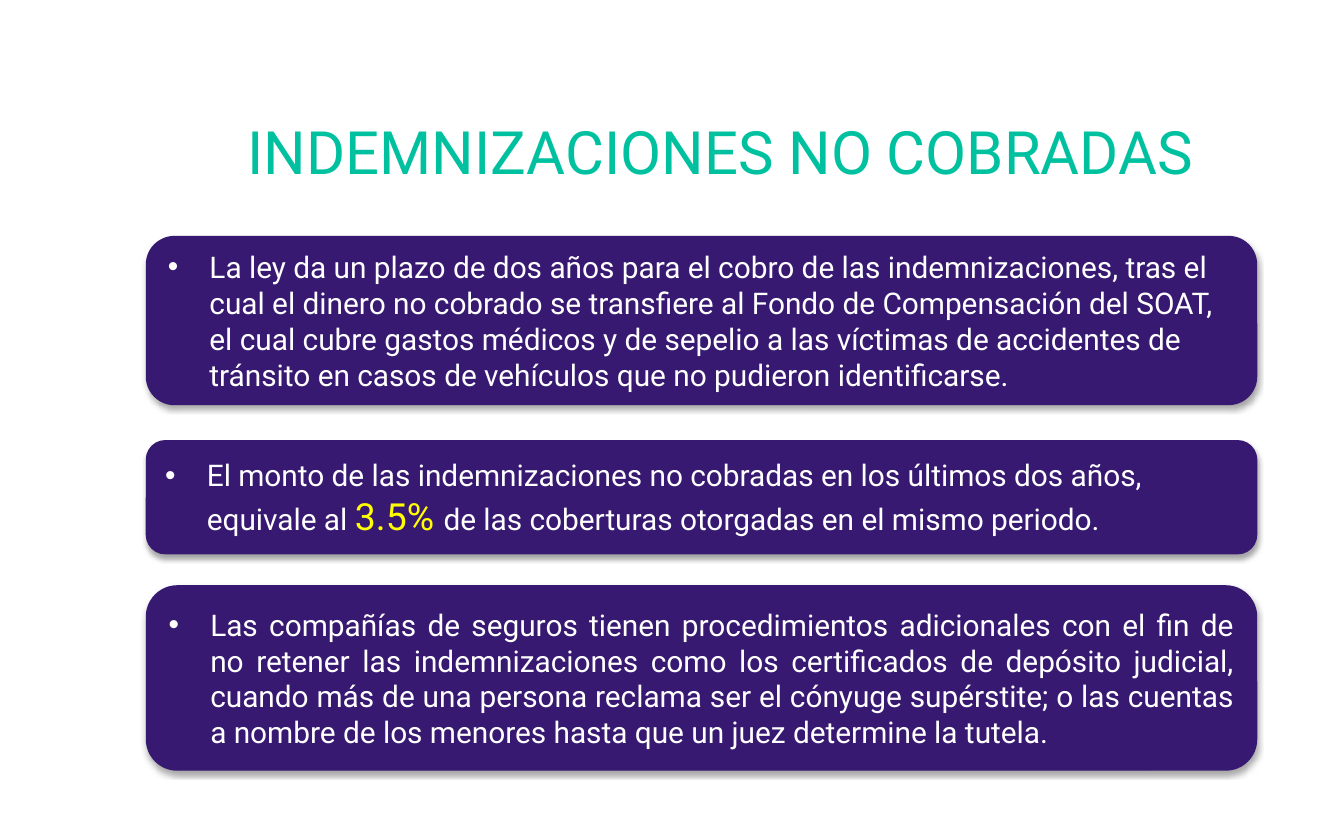
from lxml.etree import SubElement
from pptx import Presentation
from pptx.dml.color import RGBColor
from pptx.enum.shapes import MSO_SHAPE as Shape
from pptx.enum.text import MSO_ANCHOR as Anchor, PP_ALIGN as Align
from pptx.oxml.ns import qn
from pptx.util import Inches, Pt

TEAL, PURPLE, WHITE, YELLOW = "00C19F", "371971", "FFFFFF", "FFFF00"
SLIDE_WIDTH, SLIDE_HEIGHT = 10, 6.25
PANEL_LEFT, PANEL_WIDTH = 1.09, 8.26
INDENT = 0.31

PANELS = [
    (1.76, 1.25, Align.LEFT, [
        ("La ley da un plazo de dos años para el cobro de las indemnizaciones, tras el cual "
         "el dinero no cobrado se transfiere al Fondo de Compensación del SOAT, el cual cubre "
         "gastos médicos y de sepelio a las víctimas de accidentes de tránsito en casos de "
         "vehículos que no pudieron identificarse.", {})]),
    (3.28, 0.84, Align.LEFT, [
        ("El monto de las indemnizaciones no cobradas en los últimos dos años, equivale al ", {}),
        ("3.5% ", {"size": 20, "color": YELLOW}),
        ("de las coberturas otorgadas en el mismo periodo.", {})]),
    (4.36, 1.37, Align.JUSTIFY, [
        ("Las compañías de seguros tienen procedimientos adicionales con el fin de no retener "
         "las indemnizaciones como los certificados de depósito judicial, cuando más de una "
         "persona reclama ser el cónyuge supérstite; o las cuentas a nombre de los menores "
         "hasta que un juez determine la tutela.", {})]),
]


def rgb(hex_color):
    """Turn a hex string into a colour."""
    return RGBColor.from_string(hex_color)


def add_text(paragraph, text, size=16, color=WHITE, font="Roboto"):
    """Append one formatted run to a paragraph."""
    run = paragraph.add_run()
    run.text = text
    run.font.size = Pt(size)
    run.font.name = font
    run.font.color.rgb = rgb(color)


def add_bullet(paragraph):
    """Give a paragraph a hanging round bullet."""
    properties = paragraph._p.get_or_add_pPr()
    properties.set("marL", str(Inches(INDENT)))
    properties.set("indent", str(-Inches(INDENT)))
    SubElement(properties, qn("a:buFont"), typeface="Arial")
    SubElement(properties, qn("a:buChar"), char="•")


def add_shadow(shape):
    """Cast a soft black shadow straight down."""
    shape.shadow.inherit = False
    effects = shape.element.spPr.find(qn("a:effectLst"))
    shadow = SubElement(effects, qn("a:outerShdw"), blurRad=str(Pt(3.1)), dist=str(Pt(1.8)),
                        dir="5400000", rotWithShape="0")
    black = SubElement(shadow, qn("a:srgbClr"), val="000000")
    SubElement(black, qn("a:alpha"), val="35000")


def add_title(slide, text, box):
    """Place the centred heading in its box."""
    frame = slide.shapes.add_textbox(*map(Inches, box)).text_frame
    frame.word_wrap = True
    frame.vertical_anchor = Anchor.MIDDLE
    heading = frame.paragraphs[0]
    heading.alignment = Align.CENTER
    add_text(heading, text, size=32, color=TEAL)


def add_panel(slide, pieces, align, box):
    """Place one rounded panel holding a bulleted statement."""
    panel = slide.shapes.add_shape(Shape.ROUNDED_RECTANGLE, *map(Inches, box))
    panel.fill.solid()
    panel.fill.fore_color.rgb = rgb(PURPLE)
    panel.line.color.rgb = rgb(PURPLE)
    panel.line.width = Pt(0.75)
    add_shadow(panel)
    frame = panel.text_frame
    frame.word_wrap = True
    frame.vertical_anchor = Anchor.MIDDLE
    statement = frame.paragraphs[0]
    add_bullet(statement)
    statement.alignment = align
    for text, style in pieces:
        add_text(statement, text, **style)


def main():
    """Build and save the slide."""
    deck = Presentation()
    deck.slide_width, deck.slide_height = Inches(SLIDE_WIDTH), Inches(SLIDE_HEIGHT)
    slide = deck.slides.add_slide(deck.slide_layouts[6])
    add_title(slide, "INDEMNIZACIONES NO COBRADAS", (1.72, 0.6, 7.29, 1.04))
    for top, height, align, pieces in PANELS:
        add_panel(slide, pieces, align, (PANEL_LEFT, top, PANEL_WIDTH, height))
    deck.save("out.pptx")


if __name__ == "__main__":
    main()
